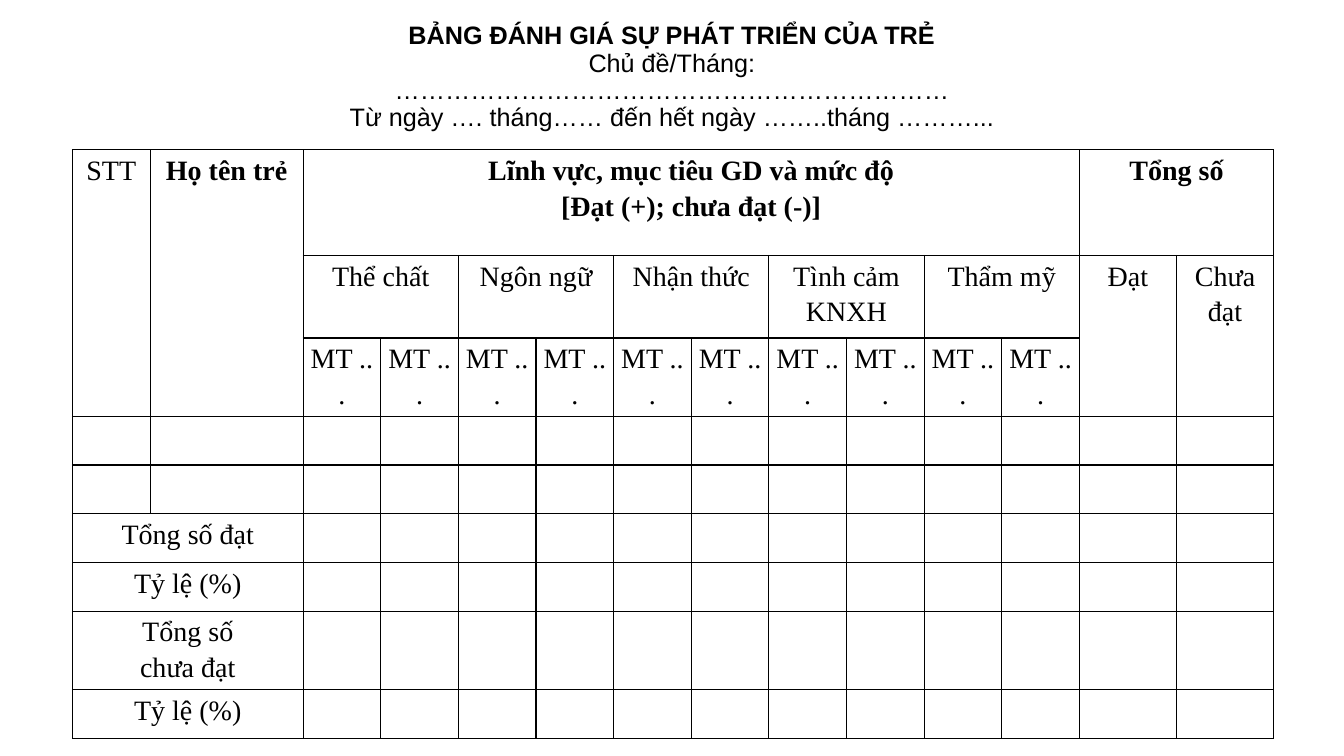
from dataclasses import dataclass

import lxml.etree
import pptx
import pptx.dml.color
import pptx.enum.text
import pptx.oxml.ns
import pptx.slide
import pptx.table
import pptx.text.text
import pptx.util

Pt = pptx.util.Pt
BLACK = pptx.dml.color.RGBColor(0x00, 0x00, 0x00)

SKILL_COUNT = 5
FIRST_GOAL = 2
GOAL_COUNT = 2 * SKILL_COUNT
FIRST_TOTAL = FIRST_GOAL + GOAL_COUNT
COLUMN_WIDTHS = [55.45, 109.3] + [55.45] * GOAL_COUNT + [69.4, 69.4]
ROW_HEIGHTS = [75.5, 59, 53.2, 34.8, 34.8, 34.8, 34.8, 53.2, 34.8]


@dataclass(frozen=True)
class Entry:
    row: int
    column: int
    text: str
    rows: int = 1
    columns: int = 1
    bold: bool = False


SKILLS = ["Thể chất", "Ngôn ngữ", "Nhận thức", "Tình cảm KNXH", "Thẩm mỹ"]
SUMMARIES = ["Tổng số đạt", "Tỷ lệ (%)", "Tổng số\nchưa đạt", "Tỷ lệ (%)"]
ENTRIES = [
    Entry(0, 0, "STT", rows=3),
    Entry(0, 1, "Họ tên trẻ", rows=3, bold=True),
    Entry(0, FIRST_GOAL, "Lĩnh vực, mục tiêu GD và mức độ\n[Đạt (+); chưa đạt (-)]",
          columns=GOAL_COUNT, bold=True),
    Entry(0, FIRST_TOTAL, "Tổng số", columns=2, bold=True),
    *(Entry(1, FIRST_GOAL + 2 * i, skill, columns=2) for i, skill in enumerate(SKILLS)),
    Entry(1, FIRST_TOTAL, "Đạt", rows=2),
    Entry(1, FIRST_TOTAL + 1, "Chưa đạt", rows=2),
    *(Entry(2, FIRST_GOAL + i, "MT ...") for i in range(GOAL_COUNT)),
    *(Entry(5 + i, 0, summary, columns=2) for i, summary in enumerate(SUMMARIES)),
]


def style_paragraph(paragraph: pptx.text.text._Paragraph, font_name: str,
                    size: float, spacing: float) -> None:
    paragraph.alignment = pptx.enum.text.PP_ALIGN.CENTER
    paragraph.line_spacing = spacing
    paragraph.font.name = font_name
    paragraph.font.size = Pt(size)
    paragraph.font.color.rgb = BLACK


def add_heading(slide: pptx.slide.Slide) -> None:
    frame = slide.shapes.add_textbox(Pt(222.5), Pt(17.3), Pt(514.8), Pt(76.3)).text_frame
    frame.word_wrap = True
    frame.vertical_anchor = pptx.enum.text.MSO_ANCHOR.MIDDLE
    heading = frame.paragraphs[0]
    style_paragraph(heading, "Arial", 18, 0.9)
    title = heading.add_run()
    title.text = "BẢNG ĐÁNH GIÁ SỰ PHÁT TRIỂN CỦA TRẺ"
    title.font.bold = True
    for line in ("Chủ đề/Tháng: …………………………………………………………",
                 "Từ ngày …. tháng…… đến hết ngày ……..tháng ………..."):
        heading.add_line_break()
        detail = heading.add_run()
        detail.text = line
        detail.font.bold = False


def outline_cell(cell: pptx.table._Cell) -> None:
    """Clear the fill and draw a thin black border on all four sides."""
    cell.fill.background()
    properties = cell._tc.get_or_add_tcPr()
    qn = pptx.oxml.ns.qn
    for position, side in enumerate(("a:lnL", "a:lnR", "a:lnT", "a:lnB")):
        border = lxml.etree.Element(qn(side), w=str(Pt(1)))
        fill = lxml.etree.SubElement(border, qn("a:solidFill"))
        lxml.etree.SubElement(fill, qn("a:srgbClr"), val=str(BLACK))
        properties.insert(position, border)


def write_entry(table: pptx.table.Table, entry: Entry) -> None:
    cell = table.cell(entry.row, entry.column)
    if entry.rows * entry.columns > 1:
        cell.merge(table.cell(entry.row + entry.rows - 1, entry.column + entry.columns - 1))
    cell.margin_left = cell.margin_right = Pt(5)
    cell.margin_top, cell.margin_bottom = Pt(0.7), Pt(0)
    cell.text = entry.text
    for paragraph in cell.text_frame.paragraphs:
        style_paragraph(paragraph, "Times New Roman", 20, 1.15)
        paragraph.font.bold = entry.bold


def add_assessment(slide: pptx.slide.Slide) -> None:
    table = slide.shapes.add_table(
        len(ROW_HEIGHTS), len(COLUMN_WIDTHS), Pt(51.8), Pt(107),
        Pt(sum(COLUMN_WIDTHS)), Pt(sum(ROW_HEIGHTS))).table
    table.first_row = table.horz_banding = False
    for column, width in zip(table.columns, COLUMN_WIDTHS):
        column.width = Pt(width)
    for row, height in zip(table.rows, ROW_HEIGHTS):
        row.height = Pt(height)
    for cell in table.iter_cells():
        outline_cell(cell)
    for entry in ENTRIES:
        write_entry(table, entry)


def main() -> None:
    presentation = pptx.Presentation()
    presentation.slide_width, presentation.slide_height = Pt(960), Pt(540)
    slide = presentation.slides.add_slide(presentation.slide_layouts[6])
    add_heading(slide)
    add_assessment(slide)
    presentation.save("out.pptx")


if __name__ == "__main__":
    main()
